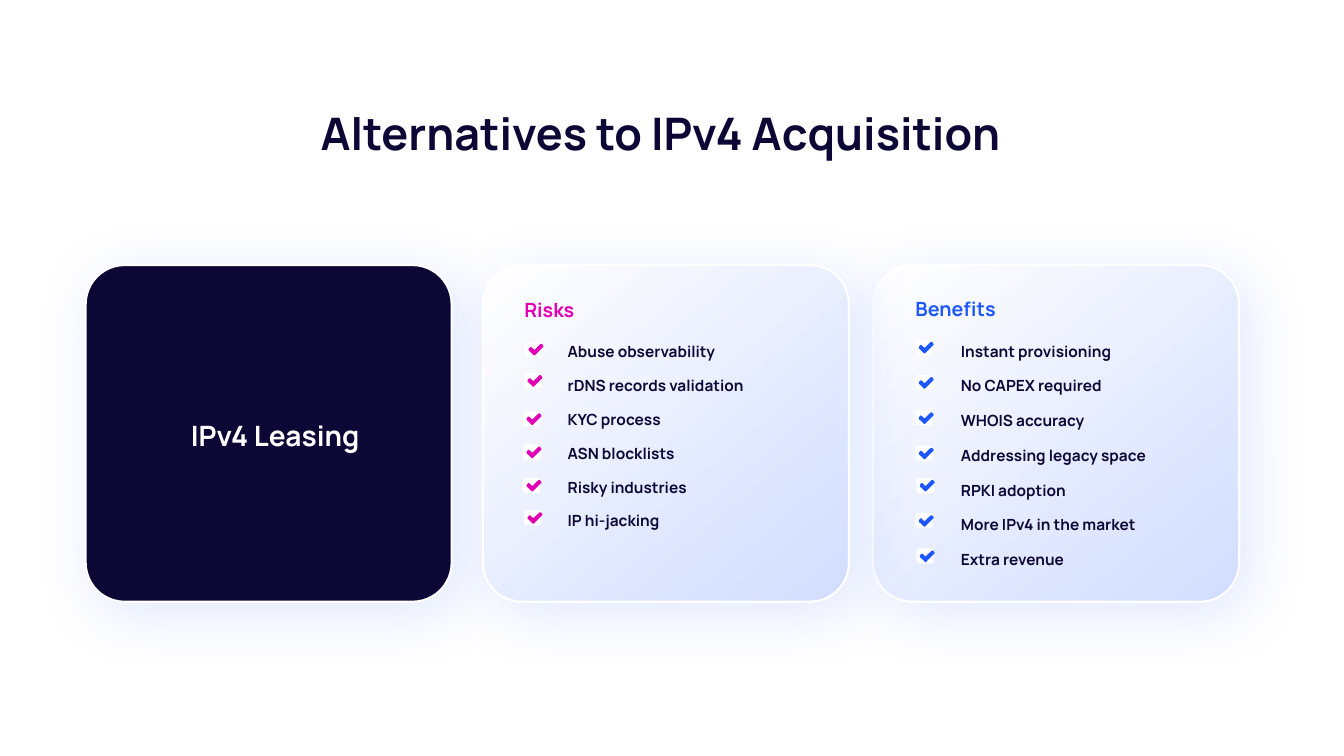
"""Build the slide comparing the risks and benefits of IPv4 leasing."""
from dataclasses import dataclass

import pptx
import pptx.dml.color
import pptx.enum.shapes
import pptx.enum.text
import pptx.oxml
import pptx.oxml.ns
import pptx.shapes.autoshape
import pptx.shapes.base
import pptx.slide
import pptx.util

Inches = pptx.util.Inches
Pt = pptx.util.Pt
Align = pptx.enum.text.PP_ALIGN
Box = tuple[float, float, float, float]


@dataclass(frozen=True)
class Theme:
    font: str = "Manrope"
    navy: str = "0D0736"
    white: str = "FFFFFF"
    pale_blue: str = "D2DDFF"
    glow: str = "2057FF"
    magenta: str = "E100B3"
    blue: str = "1D57FF"
    title_size: float = 32
    topic_size: float = 20
    heading_size: float = 14
    list_size: float = 11


@dataclass(frozen=True)
class Panel:
    card_left: float
    heading: str
    heading_id: int
    heading_box: Box
    accent: str
    items: list[str]
    list_id: int
    list_box: Box
    leading: float
    ticks: list[tuple[float, float]]


THEME = Theme()
CARD_TOP, CARD_WIDTH, CARD_HEIGHT = 2.63, 3.63, 3.34
TICK_OUTLINE = [
    (150, 30), (80, 100), (65, 116), (55, 116), (40, 100), (3, 66), (3, 52),
    (18, 34), (30, 34), (60, 62), (122, 2), (134, 2), (148, 18),
]
PANELS = [
    Panel(
        8.66, "Benefits", 3, (8.98, 2.89, 1.1, 0.34), THEME.blue,
        ["Instant provisioning", "No CAPEX required", "WHOIS accuracy",
         "Addressing legacy space", "RPKI adoption", "More IPv4 in the market",
         "Extra revenue"],
        4, (9.43, 3.18, 2.6, 2.51), 24.8,
        [(9.08, 3.37), (9.08, 3.72), (9.08, 4.07), (9.08, 4.42),
         (9.09, 4.74), (9.08, 5.09), (9.09, 5.44)],
    ),
    Panel(
        4.79, "Risks", 1, (5.1, 2.9, 1.1, 0.34), THEME.magenta,
        ["Abuse observability", "rDNS records validation", "KYC process",
         "ASN blocklists", "Risky industries", "IP hi-jacking"],
        2, (5.53, 3.21, 2.6, 2.08), 24.2,
        [(5.21, 3.39), (5.2, 3.7), (5.19, 4.08), (5.19, 4.41),
         (5.19, 4.74), (5.2, 5.06)],
    ),
]


def rgb(color: str) -> pptx.dml.color.RGBColor:
    """Turn a hex string into a colour."""
    return pptx.dml.color.RGBColor.from_string(color)


def write_text(
    holder: pptx.shapes.base.BaseShape,
    lines: list[str],
    box: Box,
    *,
    size: float,
    color: str = THEME.navy,
    align: Align = Align.LEFT,
    leading: float | None = None,
) -> None:
    """Place a text holder and fill it with formatted lines."""
    holder.left, holder.top, holder.width, holder.height = map(Inches, box)
    frame = holder.text_frame
    frame.word_wrap = True
    frame.auto_size = pptx.enum.text.MSO_AUTO_SIZE.NONE
    frame.vertical_anchor = pptx.enum.text.MSO_ANCHOR.MIDDLE
    frame.text = "\n".join(lines)
    for paragraph in frame.paragraphs:
        paragraph.alignment = align
        paragraph.space_before = paragraph.space_after = Pt(0)
        paragraph.line_spacing = Pt(leading) if leading else 1.0
        properties = paragraph._p.get_or_add_pPr()
        properties.set("marL", "0")
        properties.set("indent", "0")
        properties.append(pptx.oxml.parse_xml(
            f"<a:buNone {pptx.oxml.ns.nsdecls('a')}/>"))
        font = paragraph.runs[0].font
        font.name, font.size, font.bold = THEME.font, Pt(size), True
        font.color.rgb = rgb(color)


def add_rounded(
    slide: pptx.slide.Slide, box: Box, color: str
) -> pptx.shapes.autoshape.Shape:
    """Add a plain rounded rectangle without outline or shadow."""
    rounded = slide.shapes.add_shape(
        pptx.enum.shapes.MSO_SHAPE.ROUNDED_RECTANGLE, *map(Inches, box))
    rounded.shadow.inherit = False
    rounded.fill.solid()
    rounded.fill.fore_color.rgb = rgb(color)
    rounded.line.fill.background()
    return rounded


def add_card(
    slide: pptx.slide.Slide, left: float, depth: int, *, gradient: bool
) -> None:
    """Add a glowing card behind the text at the given depth."""
    card = add_rounded(
        slide, (left, CARD_TOP, CARD_WIDTH, CARD_HEIGHT), THEME.navy)
    card.adjustments[0] = 0.116
    card.line.color.rgb = rgb(THEME.white)
    card.line.width = Pt(1.5)
    if gradient:
        card.fill.gradient()
        card.fill.gradient_angle = 310
        for stop, position, color in zip(
            card.fill.gradient_stops, (0, 1), (THEME.white, THEME.pale_blue)
        ):
            stop.position = position
            stop.color.rgb = rgb(color)
    effects = card.element.spPr.find(pptx.oxml.ns.qn("a:effectLst"))
    effects.append(pptx.oxml.parse_xml(
        f'<a:outerShdw {pptx.oxml.ns.nsdecls("a")} blurRad="{Pt(43)}" '
        f'dist="{Pt(10)}" dir="{50 * 60000}" algn="ctr" rotWithShape="0">'
        f'<a:srgbClr val="{THEME.glow}"><a:alpha val="13000"/></a:srgbClr>'
        "</a:outerShdw>"))
    slide.shapes._spTree.insert(2 + depth, card.element)


def add_tick(
    slide: pptx.slide.Slide, left: float, top: float, color: str
) -> None:
    """Add a white badge with a coloured tick on it."""
    add_rounded(slide, (left, top, 0.17, 0.15), THEME.white)
    builder = slide.shapes.build_freeform(
        *TICK_OUTLINE[0], scale=Inches(0.001))
    builder.add_line_segments(TICK_OUTLINE[1:])
    tick = builder.convert_to_shape(Inches(left + 0.03), Inches(top + 0.02))
    tick.shadow.inherit = False
    tick.fill.solid()
    tick.fill.fore_color.rgb = rgb(color)
    tick.line.fill.background()


def add_panel(slide: pptx.slide.Slide, panel: Panel, depth: int) -> None:
    """Add a card with its heading, list and ticks."""
    add_card(slide, panel.card_left, depth, gradient=True)
    holders = {
        holder.placeholder_format.idx: holder for holder in slide.placeholders}
    write_text(holders[panel.heading_id], [panel.heading], panel.heading_box,
               size=THEME.heading_size, color=panel.accent)
    write_text(holders[panel.list_id], panel.items, panel.list_box,
               size=THEME.list_size, leading=panel.leading)
    for left, top in panel.ticks:
        add_tick(slide, left, top, panel.accent)


def main() -> None:
    """Build and save the presentation."""
    deck = pptx.Presentation()
    deck.slide_width, deck.slide_height = Inches(13.33), Inches(7.5)
    slide = deck.slides.add_slide(deck.slide_layouts.get_by_name("Comparison"))
    write_text(slide.shapes.title, ["Alternatives to IPv4 Acquisition"],
               (0.42, 1, 12.27, 0.64), size=THEME.title_size,
               align=Align.CENTER)
    add_card(slide, 0.85, 0, gradient=False)
    topic_box = (1.13, 4.1, 3.2, 0.44)
    topic = slide.shapes.add_textbox(*map(Inches, topic_box))
    write_text(topic, ["IPv4 Leasing"], topic_box, size=THEME.topic_size,
               color=THEME.white, align=Align.CENTER)
    for depth, panel in enumerate(PANELS, start=1):
        add_panel(slide, panel, depth)
    deck.save("out.pptx")


if __name__ == "__main__":
    main()
